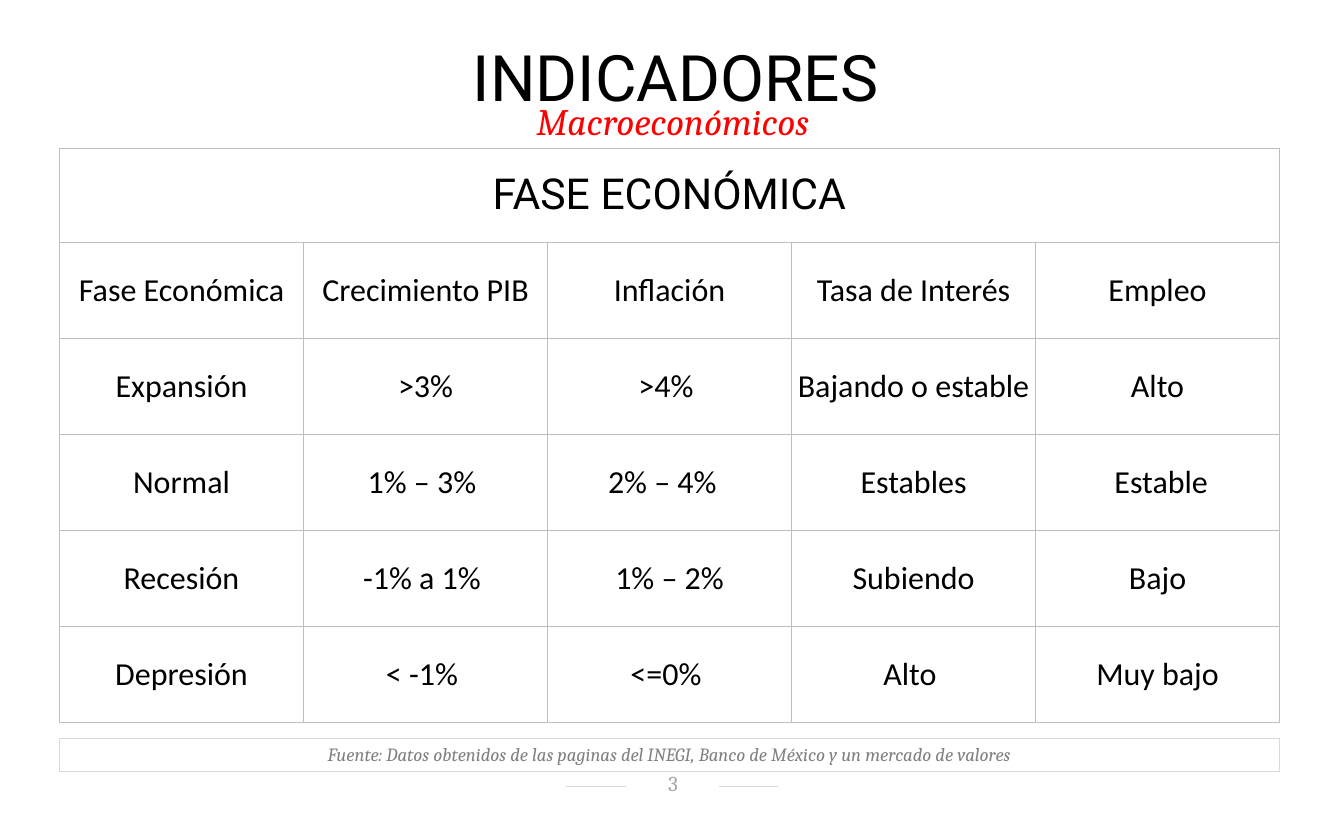
from lxml import etree
from pptx import Presentation
from pptx.dml.color import RGBColor
from pptx.enum.shapes import MSO_CONNECTOR, MSO_SHAPE
from pptx.enum.text import MSO_ANCHOR, MSO_AUTO_SIZE, PP_ALIGN
from pptx.oxml.ns import qn
from pptx.util import Inches, Pt

CENTER = PP_ALIGN.CENTER
TOP, MIDDLE = MSO_ANCHOR.TOP, MSO_ANCHOR.MIDDLE
NO_AUTOFIT = MSO_AUTO_SIZE.NONE
STRAIGHT = MSO_CONNECTOR.STRAIGHT
RECTANGLE = MSO_SHAPE.RECTANGLE

TITLE = "INDICADORES"
SUBTITLE = "Macroeconómicos "
TABLE_TITLE = "FASE ECONÓMICA"
PHASES = [
    ["Fase Económica", "Crecimiento PIB", "Inflación", "Tasa de Interés", "Empleo"],
    ["Expansión", ">3%", ">4% ", "Bajando o estable", "Alto"],
    ["Normal", "1% – 3% ", "2% – 4%  ", "Estables", " Estable"],
    ["Recesión", "-1% a 1% ", "1% – 2%", "Subiendo", "Bajo"],
    ["Depresión", " < -1%  ", "<=0% ", "Alto ", "Muy bajo"],
]
SOURCE = "Fuente: Datos obtenidos de las paginas del INEGI, Banco de México y un mercado de valores"
PAGE_NUMBER = "3"
FOOTER_RULES = [(5.9, 6.52), (7.49, 8.1)]
FOOTER_RULE_Y = 8.19

LEFT, WIDTH = 0.62, 12.71
TABLE_TOP, TITLE_ROW, PHASE_ROW = 1.54, 0.98, 1
BOX_MARGINS = (0.1, 0.05, 0.1, 0.05)


def rgb(value):
    return RGBColor.from_string(value)


def set_margins(target, margins):
    target.margin_left, target.margin_top, target.margin_right, target.margin_bottom = map(Inches, margins)


def write(frame, text, size, font, color, italic=False):
    para = frame.paragraphs[0]
    para.alignment = CENTER
    span = para.add_run()
    span.text = text
    span.font.size = Pt(size)
    span.font.name = font
    span.font.italic = italic
    span.font.color.rgb = rgb(color)
    return para


def prepare_frame(shape, margins=BOX_MARGINS, anchor=TOP):
    frame = shape.text_frame
    frame.word_wrap = True
    frame.auto_size = NO_AUTOFIT
    frame.vertical_anchor = anchor
    set_margins(frame, margins)
    return frame


def add_text_box(page, bounds, margins=BOX_MARGINS, anchor=TOP):
    box = page.shapes.add_textbox(*map(Inches, bounds))
    return prepare_frame(box, margins, anchor)


def add_rule(page, start, end, y):
    rule = page.shapes.add_connector(STRAIGHT, Inches(start), Inches(y), Inches(end), Inches(y))
    rule.line.color.rgb = rgb("D9D9D9")
    rule.line.width = Pt(0.5)
    etree.SubElement(rule._element.spPr, qn("a:effectLst"))


def set_borders(cell, color, width):
    properties = cell._tc.get_or_add_tcPr()
    for side in ("a:lnL", "a:lnR", "a:lnT", "a:lnB"):
        border = etree.SubElement(properties, qn(side), w=str(Pt(width)))
        fill = etree.SubElement(border, qn("a:solidFill"))
        etree.SubElement(fill, qn("a:srgbClr"), val=color)


def add_phase_table(page):
    columns = len(PHASES[0])
    height = TITLE_ROW + PHASE_ROW * len(PHASES)
    table = page.shapes.add_table(
        len(PHASES) + 1, columns, Inches(LEFT), Inches(TABLE_TOP), Inches(WIDTH), Inches(height)
    ).table
    table.first_row = table.horz_banding = False
    for column in table.columns:
        column.width = Inches(WIDTH / columns)
    for index, row in enumerate(table.rows):
        row.height = Inches(PHASE_ROW if index else TITLE_ROW)
    for cell in table.iter_cells():
        set_borders(cell, "BFBFBF", 0.5)
        cell.fill.background()
        cell.vertical_anchor = MIDDLE
        set_margins(cell, (0.01, 0.01, 0.01, 0))
    heading = table.cell(0, 0)
    heading.merge(table.cell(0, columns - 1))
    set_margins(heading, (0.01, 0.03, 0.01, 0.03))
    write(heading.text_frame, TABLE_TITLE, 32, "Roboto", "000000")
    for row, values in enumerate(PHASES, 1):
        for column, value in enumerate(values):
            write(table.cell(row, column).text_frame, value, 24, "Calibri", "000000")


def add_source(page):
    box = page.shapes.add_shape(RECTANGLE, *map(Inches, (LEFT, 7.69, WIDTH, 0.35)))
    box.shadow.inherit = False
    box.fill.background()
    box.line.color.rgb = rgb("D9D9D9")
    box.line.width = Pt(0.75)
    write(prepare_frame(box), SOURCE, 14, "Cambria", "808080", italic=True)


def main():
    deck = Presentation()
    deck.slide_width, deck.slide_height = Inches(14), Inches(8.5)
    page = deck.slides.add_slide(deck.slide_layouts[5])
    for start, end in FOOTER_RULES:
        add_rule(page, start, end, FOOTER_RULE_Y)
    number = add_text_box(page, (6.51, 8.04, 0.98, 0.26), (0.12, 0.02, 0.1, 0.05), MIDDLE)
    write(number, PAGE_NUMBER, 16, "Cambria", "A6A6A6")
    title = page.shapes.title
    title.left, title.top, title.width, title.height = map(Inches, (0.06, 0.54, 13.96, 0.7))
    frame = prepare_frame(title, (0.13, 0.07, 0.13, 0.07))
    write(frame, TITLE, 48, "Roboto", "000000").line_spacing = 0.7
    subtitle = add_text_box(page, (0.05, 0.97, 14, 0.57))
    write(subtitle, SUBTITLE, 28, "Cambria", "FF0000", italic=True).space_after = Pt(4)
    add_source(page)
    add_phase_table(page)
    deck.save("out.pptx")


if __name__ == "__main__":
    main()
